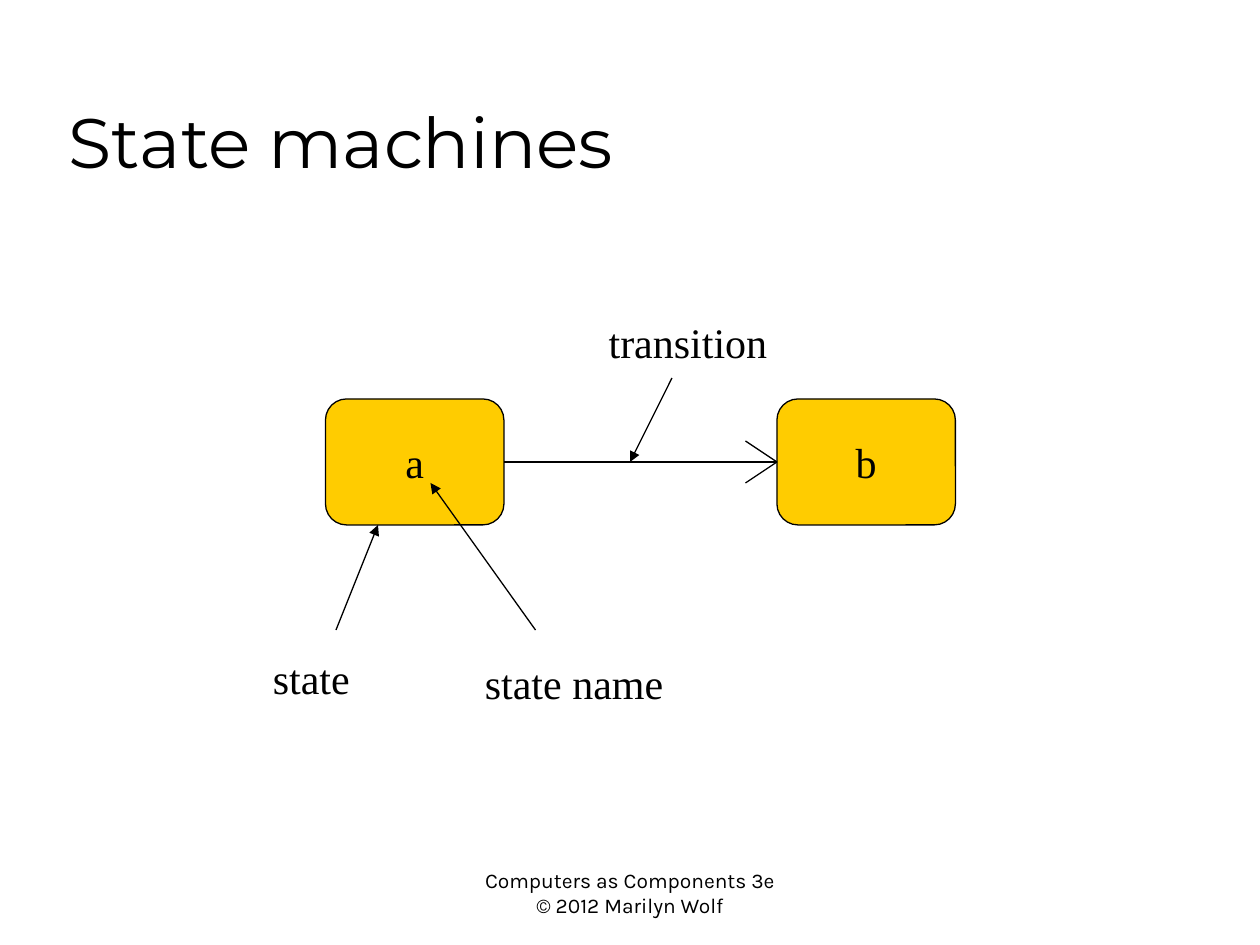
from lxml import etree
from pptx import Presentation
from pptx.dml.color import RGBColor
from pptx.enum import shapes, text
from pptx.oxml.ns import qn
from pptx.util import Pt

THEME = {
    "ink": RGBColor(0, 0, 0),
    "state": RGBColor(0xFF, 0xCC, 0x00),
    "line": 0.75,
    "title": ("Montserrat", 40),
    "label": ("Times New Roman", 24),
    "foot": ("Karla", 12),
}
LEFT, MID = text.PP_ALIGN.LEFT, text.PP_ALIGN.CENTER
TOP, BASE = text.MSO_ANCHOR.TOP, text.MSO_ANCHOR.BOTTOM

# Content: text, box (left, top, width, height), style, align, anchor, wrap
TEXTS = [
    ("Computers as Components 3e\n© 2012 Marilyn Wolf",
     (264, 492, 192, 36), "foot", MID, TOP, True),
    ("State machines", (32, 18, 612, 90), "title", LEFT, BASE, True),
    ("state", (148.8, 369.4, 60, 36), "label", LEFT, TOP, False),
    ("state name", (270, 372, 118, 36), "label", LEFT, TOP, False),
    ("transition", (340.7, 177.4, 106, 36), "label", LEFT, TOP, False),
]
STATES = [("a", 186), ("b", 444)]  # name, left
STATE_TOP, STATE_W, STATE_H = 228, 102, 72
HEAD_W, HEAD_H = 18, 12  # open arrowhead of the transition
POINTERS = [  # label end, target end
    ((192, 360), (216, 300)),
    ((306, 360), (246, 276)),
    ((384, 216), (360, 264)),
]

deck = Presentation()
deck.slide_width, deck.slide_height = Pt(720), Pt(540)
slide = deck.slides.add_slide(deck.slide_layouts[6])


def write(shape, words, style, align, anchor, wrap):
    frame = shape.text_frame
    frame.text = words
    frame.word_wrap = wrap
    frame.vertical_anchor = anchor
    face, size = THEME[style]
    for para in frame.paragraphs:
        para.alignment = align
        for run in para.runs:
            run.font.name, run.font.size = face, Pt(size)
            run.font.color.rgb = THEME["ink"]


def draw(start, end, tip=False):
    line = slide.shapes.add_connector(
        shapes.MSO_CONNECTOR.STRAIGHT, *map(Pt, start + end))
    line.line.color.rgb = THEME["ink"]
    line.line.width = Pt(THEME["line"])
    if tip:
        etree.SubElement(line.line._get_or_add_ln(), qn("a:tailEnd"),
                         type="triangle")
    etree.SubElement(line._element.spPr, qn("a:effectLst"))
    return line


# States
nodes = []
for name, left in STATES:
    node = slide.shapes.add_shape(
        shapes.MSO_SHAPE.ROUNDED_RECTANGLE,
        *map(Pt, (left, STATE_TOP, STATE_W, STATE_H)))
    node.adjustments[0] = 0.167
    node.shadow.inherit = False
    node.fill.solid()
    node.fill.fore_color.rgb = THEME["state"]
    node.line.color.rgb = THEME["ink"]
    node.line.width = Pt(THEME["line"])
    write(node, name, "label", MID, text.MSO_ANCHOR.MIDDLE, False)
    nodes.append(node)

# Transition with its open arrowhead
axis = STATE_TOP + STATE_H / 2
goal = (STATES[1][1], axis)
edge = draw((STATES[0][1] + STATE_W, axis), goal)
edge.begin_connect(nodes[0], 3)
edge.end_connect(nodes[1], 1)
for side in (-1, 1):
    draw(goal, (goal[0] - HEAD_W, axis + side * HEAD_H))

# Pointers from the labels
for start, end in POINTERS:
    draw(start, end, tip=True)

# Title, labels and footer; unwrapped labels grow with their text
for words, box, *look, wrap in TEXTS:
    area = slide.shapes.add_textbox(*map(Pt, box))
    write(area, words, *look, wrap)
    if not wrap:
        area.text_frame.auto_size = text.MSO_AUTO_SIZE.SHAPE_TO_FIT_TEXT

deck.save("out.pptx")
